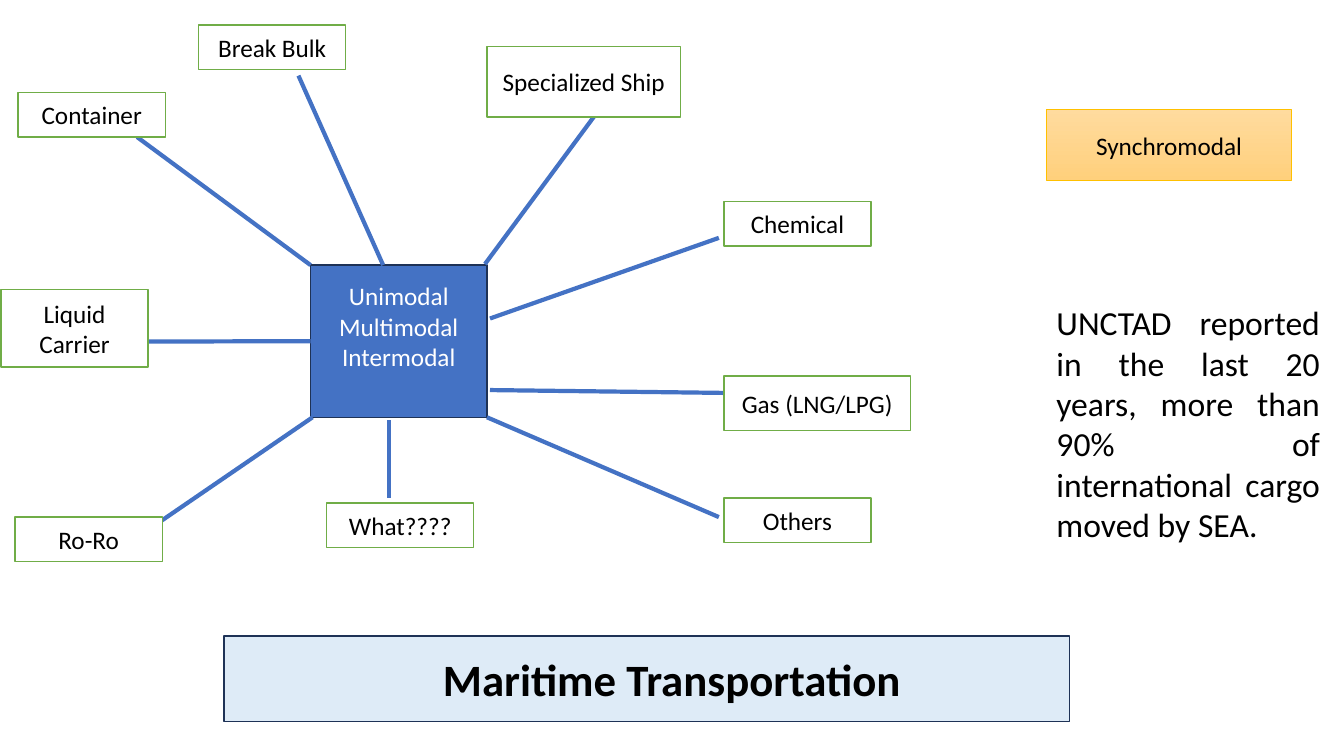
from lxml import etree
from pptx import Presentation
from pptx.dml.color import RGBColor
from pptx.enum.shapes import MSO_CONNECTOR, MSO_SHAPE
from pptx.enum.text import MSO_ANCHOR, MSO_AUTO_SIZE, PP_ALIGN
from pptx.oxml import parse_xml
from pptx.oxml.ns import nsdecls, qn
from pptx.util import Inches, Pt

FONT = "Calibri"
COLORS = {
    "white": "FFFFFF", "black": "000000", "blue": "4472C4", "navy": "1E3256",
    "green": "70AD47", "pale blue": "DEEBF7", "amber": "FFC000",
    "amber top": "FFDB9E", "amber bottom": "FFD07C",
}
TITLE = "Maritime Transportation"
TITLE_BOX = (2.22, 6.31, 8.39, 0.85)
HUB_LINES = ["Unimodal", "Multimodal", "Intermodal"]
HUB_BOX = (3.08, 2.63, 1.75, 1.51)
SYNCHROMODAL_BOX = (10.38, 1.09, 2.43, 0.7)
REPORT = ("UNCTAD reported in the last 20 years, more than 90% of "
          "international cargo moved by SEA.")
REPORT_BOX = (10.38, 2.52, 2.81, 3.36)
SMALL = (1.46, 0.44)
# Cargo type: box corner, box size, spoke start, spoke end
CARGO = {
    "Container": ((0.18, 0.92), SMALL, (1.36, 1.36), (3.08, 2.63)),
    "Liquid Carrier": ((0.01, 2.87), (1.46, 0.77), (0.88, 3.39), (3.06, 3.39)),
    "Ro-Ro": ((0.15, 5.13), SMALL, (1.45, 5.27), (3.1, 4.14)),
    "What????": ((3.24, 4.99), SMALL, (3.86, 4.94), (3.86, 4.17)),
    "Others": ((7.18, 4.94), SMALL, (7.13, 5.13), (4.83, 4.14)),
    "Gas (LNG/LPG)": ((7.18, 3.73), (1.85, 0.54), (7.35, 3.9), (4.86, 3.87)),
    "Chemical": ((7.18, 2), SMALL, (7.13, 2.36), (4.86, 3.16)),
    "Specialized Ship": ((4.83, 0.46), (1.92, 0.7), (6.37, 0.51), (4.81, 2.62)),
    "Break Bulk": ((1.97, 0.25), SMALL, (2.96, 0.75), (3.8, 2.63)),
}


def rgb(name):
    return RGBColor.from_string(COLORS[name])


def inches(values):
    return [Inches(value) for value in values]


def write(shape, text, size=18, color="black", align=PP_ALIGN.CENTER, bold=False):
    frame = shape.text_frame
    frame.text = text
    frame.word_wrap = True
    frame.auto_size = MSO_AUTO_SIZE.NONE
    frame.vertical_anchor = MSO_ANCHOR.MIDDLE
    for paragraph in frame.paragraphs:
        paragraph.alignment = align
        for run in paragraph.runs:
            font = run.font
            font.name, font.size, font.bold = FONT, Pt(size), bold
            font.color.rgb = rgb(color)


def paint(shape, fill, line, width=1):
    shape.fill.solid()
    shape.fill.fore_color.rgb = rgb(fill)
    shape.line.color.rgb = rgb(line)
    shape.line.width = Pt(width)


def add_box(slide, box, text, fill, line, width=1, color="black"):
    shape = slide.shapes.add_shape(MSO_SHAPE.RECTANGLE, *inches(box))
    shape.shadow.inherit = False
    paint(shape, fill, line, width)
    write(shape, text, color=color)
    return shape


def add_spoke(slide, start, end):
    spoke = slide.shapes.add_connector(MSO_CONNECTOR.STRAIGHT, *inches(start + end))
    spoke.line.color.rgb = rgb("blue")
    spoke.line.width = Pt(3)
    etree.SubElement(spoke._element.spPr, qn("a:effectLst"))
    return spoke


def main():
    presentation = Presentation()
    presentation.slide_width, presentation.slide_height = inches((13.33, 7.5))
    slide = presentation.slides.add_slide(presentation.slide_layouts[5])

    # Title banner with snipped top corners
    title = slide.shapes.title
    title.left, title.top, title.width, title.height = inches(TITLE_BOX)
    title._element.spPr.append(parse_xml(
        f'<a:prstGeom {nsdecls("a")} prst="snip2SameRect"><a:avLst/></a:prstGeom>'))
    paint(title, "pale blue", "navy")
    write(title, TITLE, size=32, bold=True)
    title.text_frame.margin_left = Inches(0.6)

    # Hub, with its text raised above the middle
    hub = add_box(slide, HUB_BOX, "\n".join(HUB_LINES), "blue", "navy", color="white")
    hub.text_frame.margin_bottom = Inches(0.35)

    # Spokes, then the cargo boxes that cover their outer ends
    spokes = {name: add_spoke(slide, start, end)
              for name, (_, _, start, end) in CARGO.items()}
    spokes["Liquid Carrier"].end_connect(hub, 1)
    for name, (corner, size, _, _) in CARGO.items():
        add_box(slide, corner + size, name, "white", "green")

    # Synchromodal box, shaded from top to bottom
    synchromodal = add_box(slide, SYNCHROMODAL_BOX, "Synchromodal",
                           "amber top", "amber", width=0.5)
    synchromodal.fill.gradient()
    synchromodal.fill.gradient_angle = 270
    for stop, name in zip(synchromodal.fill.gradient_stops,
                          ("amber top", "amber bottom")):
        stop.color.rgb = rgb(name)

    # Report text
    report = slide.shapes.add_textbox(*inches(REPORT_BOX))
    write(report, REPORT, size=24, align=PP_ALIGN.JUSTIFY)

    presentation.save("out.pptx")


if __name__ == "__main__":
    main()
